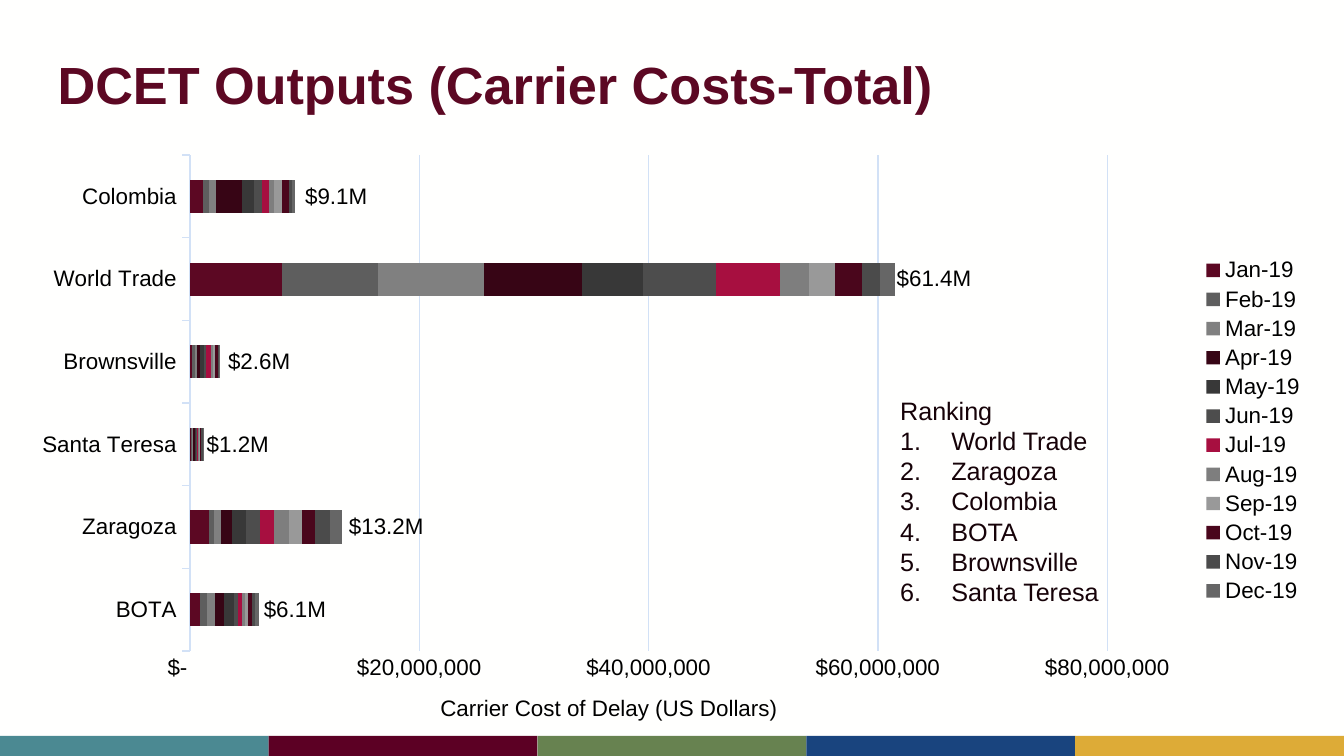
from lxml.etree import SubElement
from pptx import Presentation
from pptx.chart.data import CategoryChartData
from pptx.dml.color import RGBColor
from pptx.enum.chart import XL_CHART_TYPE, XL_LEGEND_POSITION, XL_TICK_MARK
from pptx.enum.shapes import MSO_SHAPE
from pptx.enum.text import MSO_ANCHOR
from pptx.oxml import parse_xml
from pptx.oxml.ns import nsdecls, qn
from pptx.util import Inches, Pt

WIDTH, HEIGHT = Inches(10), Inches(5.625)

BACKGROUND = RGBColor(0xFF, 0xFF, 0xFE)
MAROON = RGBColor(0x5C, 0x08, 0x23)
INK = RGBColor(0x16, 0x02, 0x08)
BLACK = RGBColor(0x00, 0x00, 0x00)
PALE_BLUE = RGBColor(0xD2, 0xE1, 0xF6)
STRIPE_COLORS = [RGBColor.from_string(code) for code in
                 ("4B8992", "5C0024", "678250", "19447E", "DDAB37")]

TITLE_FONT = {"name": "Arial", "size": Pt(28), "bold": True}
RANKING_FONT = {"name": "Arial", "size": Pt(13.5), "bold": False}
CHART_FONT = {"name": "Arial", "size": Pt(12), "bold": False}
DOLLARS = r'_("$"* #,##0_);_("$"* \(#,##0\);_("$"* "-"??_);_(@_)'

CROSSINGS = ["BOTA", "Zaragoza", "Santa Teresa", "Brownsville", "World Trade", "Colombia"]
RANKING = ["World Trade", "Zaragoza", "Colombia", "BOTA", "Brownsville", "Santa Teresa"]

# Month, bar colour, and cost in millions for each crossing
MONTHS = [
    ("Jan", "5C0823", (0.9, 1.7, 0.1, 0.2, 8.0, 1.1)),
    ("Feb", "5E5E5E", (0.6, 0.4, 0.1, 0.2, 8.4, 0.6)),
    ("Mar", "808080", (0.7, 0.6, 0.1, 0.2, 9.2, 0.6)),
    ("Apr", "370515", (0.8, 1.0, 0.1, 0.3, 8.6, 2.2)),
    ("May", "383838", (0.8, 1.2, 0.1, 0.3, 5.3, 1.1)),
    ("Jun", "4D4D4D", (0.4, 1.2, 0.1, 0.2, 6.4, 0.7)),
    ("Jul", "A70F40", (0.3, 1.2, 0.1, 0.4, 5.6, 0.6)),
    ("Aug", "7E7E7E", (0.3, 1.3, 0.1, 0.2, 2.5, 0.4)),
    ("Sep", "999999", (0.3, 1.2, 0.1, 0.2, 2.3, 0.7)),
    ("Oct", "4A061C", (0.3, 1.1, 0.1, 0.2, 2.3, 0.6)),
    ("Nov", "4B4B4B", (0.3, 1.3, 0.1, 0.1, 1.6, 0.3)),
    ("Dec", "666666", (0.36, 1.03, 0.06, 0.07, 1.25, 0.26)),
]
# Total per crossing and its shift right of the last bar part, as a share of chart width
TOTALS = [("$6.1M", 0.029), ("$13.2M", 0.039), ("$1.2M", 0.027),
          ("$2.6M", 0.031), ("$61.4M", 0.036), ("$9.1M", 0.033)]


def format_font(font, values, color):
    for name, value in values.items():
        setattr(font, name, value)
    font.color.rgb = color


def manual_layout(**values):
    parts = "".join(f'<c:{name} val="{value}"/>' for name, value in values.items())
    return parse_xml(f'<c:layout {nsdecls("c")}><c:manualLayout>{parts}'
                     "</c:manualLayout></c:layout>")


def add_text(slide, left, top, width, height, lines, values, color):
    box = slide.shapes.add_textbox(*(Inches(n) for n in (left, top, width, height)))
    frame = box.text_frame
    frame.word_wrap = True
    frame.text = "\n".join(lines)
    for paragraph in frame.paragraphs:
        format_font(paragraph.runs[0].font, values, color)
    return frame


def add_stripes(slide):
    width, height = WIDTH // len(STRIPE_COLORS), Inches(0.15)
    for column, color in enumerate(STRIPE_COLORS):
        stripe = slide.shapes.add_shape(MSO_SHAPE.RECTANGLE, column * width,
                                        HEIGHT - height, width, height)
        stripe.shadow.inherit = False
        stripe.fill.solid()
        stripe.fill.fore_color.rgb = color
        stripe.line.fill.background()


def add_ranking(slide):
    frame = add_text(slide, 6.6, 2.89, 2.1, 1.92, ["Ranking"] + RANKING, RANKING_FONT, INK)
    for paragraph in frame.paragraphs[1:]:
        properties = paragraph._p.get_or_add_pPr()
        properties.set("marL", str(Inches(0.38)))
        properties.set("indent", str(-Inches(0.38)))
        SubElement(properties, qn("a:buAutoNum"), type="arabicPeriod")


def format_axes(chart):
    category, value = chart.category_axis, chart.value_axis
    category.major_tick_mark = XL_TICK_MARK.OUTSIDE
    value.major_tick_mark = XL_TICK_MARK.NONE
    value.minimum_scale, value.maximum_scale, value.major_unit = 0, 80_000_000, 20_000_000
    value.format.line.fill.background()
    for line in (category.format.line, value.major_gridlines.format.line):
        line.color.rgb = PALE_BLUE
        line.width = Pt(0.75)
    for axis in (category, value):
        format_font(axis.tick_labels.font, CHART_FONT, BLACK)
    value.tick_labels.number_format = DOLLARS
    value.tick_labels.number_format_is_linked = False
    frame = value.axis_title.text_frame
    frame.text = "Carrier Cost of Delay (US Dollars)"
    format_font(frame.paragraphs[0].runs[0].font, CHART_FONT, BLACK)


def add_totals(series):
    for index, (total, shift) in enumerate(TOTALS):
        frame = series.points[index].data_label.text_frame
        frame.text = total
        format_font(frame.paragraphs[0].runs[0].font, CHART_FONT, BLACK)
    labels = series.data_labels
    labels.show_value = True
    format_font(labels.font, CHART_FONT, BLACK)
    for label, (total, shift) in zip(labels._element.findall(qn("c:dLbl")), TOTALS):
        label.insert(1, manual_layout(x=shift, y=0))


def add_cost_chart(slide):
    data = CategoryChartData(number_format=DOLLARS)
    data.categories = CROSSINGS
    for month, color, costs in MONTHS:
        data.add_series(f"{month}-19", [round(cost * 1_000_000) for cost in costs])
    area = (Inches(n) for n in (0.17, 1, 9.64, 4.41))
    chart = slide.shapes.add_chart(XL_CHART_TYPE.BAR_STACKED, *area, data).chart
    format_font(chart.font, CHART_FONT, BLACK)
    chart.has_title = False

    # Bars
    plot = chart.plots[0]
    plot.gap_width, plot.overlap, plot.vary_by_categories = 150, 100, False
    for series, (month, color, costs) in zip(plot.series, MONTHS):
        series.format.fill.solid()
        series.format.fill.fore_color.rgb = RGBColor.from_string(color)
    add_totals(plot.series[-1])

    # Axes, legend and plot area
    format_axes(chart)
    chart.has_legend = True
    chart.legend.position = XL_LEGEND_POSITION.RIGHT
    chart.legend.include_in_layout = False
    format_font(chart.legend.font, CHART_FONT, BLACK)
    plot_area = chart._chartSpace.chart.plotArea
    for layout in plot_area.findall(qn("c:layout")):
        plot_area.remove(layout)
    plot_area.insert(0, manual_layout(layoutTarget="inner", xMode="edge", yMode="edge",
                                      x=0.129, y=0.035, w=0.708, h=0.837))


def main():
    presentation = Presentation()
    presentation.slide_width, presentation.slide_height = WIDTH, HEIGHT
    slide = presentation.slides.add_slide(presentation.slide_layouts[6])
    slide.background.fill.solid()
    slide.background.fill.fore_color.rgb = BACKGROUND

    add_stripes(slide)
    title = add_text(slide, 0.33, 0.3, 9.35, 0.7, ["DCET Outputs (Carrier Costs-Total)"],
                     TITLE_FONT, MAROON)
    title.vertical_anchor = MSO_ANCHOR.MIDDLE
    title.paragraphs[0].line_spacing = 0.9
    add_cost_chart(slide)
    add_ranking(slide)
    presentation.save("out.pptx")


if __name__ == "__main__":
    main()
